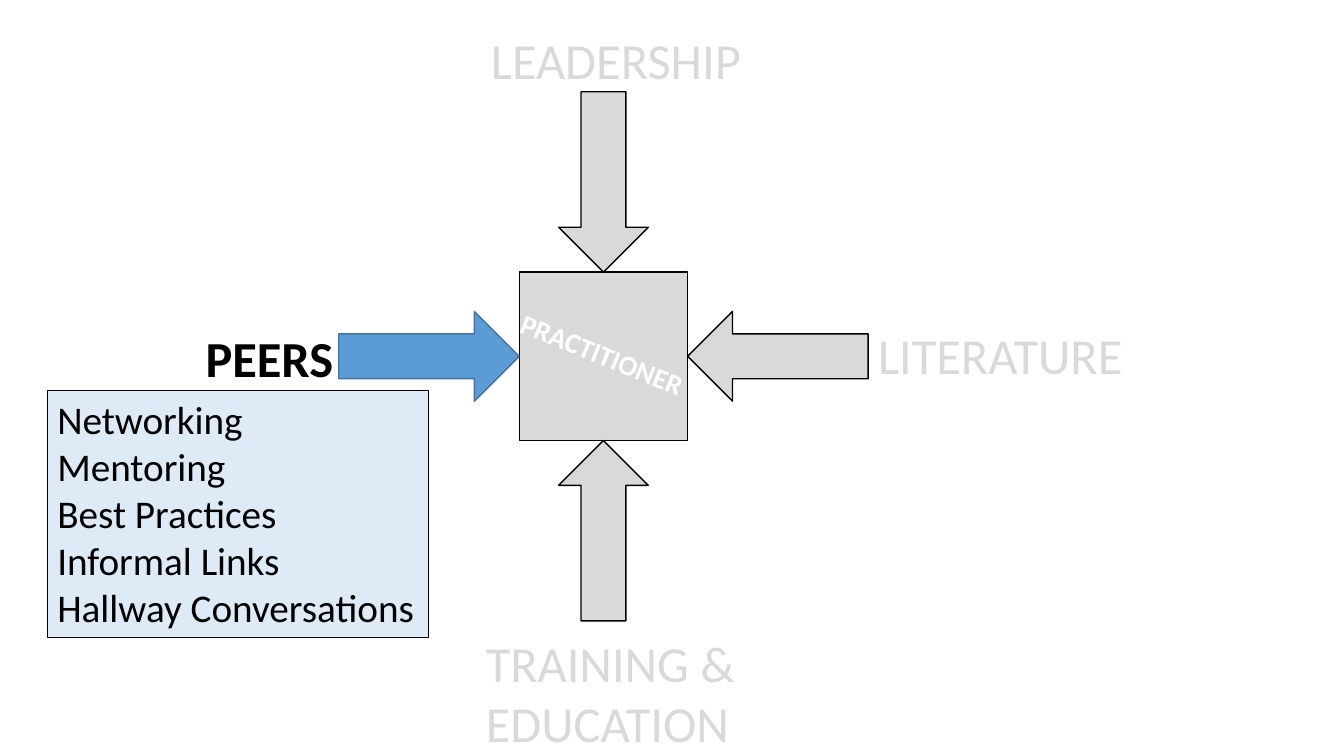
"""Build the slide of four influences on a practitioner, with peers highlighted."""
from pptx import Presentation
from pptx.dml.color import RGBColor
from pptx.enum.shapes import MSO_SHAPE
from pptx.enum.text import MSO_ANCHOR, MSO_AUTO_SIZE, PP_ALIGN
from pptx.util import Pt

PX = 9144
FONT = "Calibri"
RECTANGLE = MSO_SHAPE.RECTANGLE
RIGHT_ARROW, DOWN_ARROW = MSO_SHAPE.RIGHT_ARROW, MSO_SHAPE.DOWN_ARROW
TOP, LEFT, GROW = MSO_ANCHOR.TOP, PP_ALIGN.LEFT, MSO_AUTO_SIZE.SHAPE_TO_FIT_TEXT
COLORS = {
    "muted": "D9D9D9",
    "accent": "5B9BD5",
    "accent_line": "43739E",
    "panel": "DEEBF7",
    "black": "000000",
    "white": "FFFFFF",
}

SQUARE_LEFT, SQUARE_TOP, SQUARE_SIZE = 515, 270, 167
ARROW_LENGTH, ARROW_WIDTH = 179, 89
LABELS = [
    (["LEADERSHIP"], (477, 24, 277, 71), 36, "muted", False, 0),
    (["PEERS"], (194, 320, 148, 71), 36, "black", True, 0),
    (["LITERATURE"], (861, 317, 265, 71), 36, "muted", False, 0),
    (["TRAINING &", "EDUCATION"], (472, 622, 281, 131), 36, "muted", False, 0),
    (["PRACTITIONER"], (502, 330, 192, 44), 20, "white", True, 22),
]
PEER_SOURCES = [
    "Networking",
    "Mentoring",
    "Best Practices",
    "Informal Links",
    "Hallway Conversations",
]
PEER_PANEL = (47, 387, 378, 246)


def color(name):
    return RGBColor.from_string(COLORS[name])


def scaled(frame):
    return [length * PX for length in frame]


def add_figure(page, kind, frame, fill="muted", line="black", weight=1, turn=0):
    figure = page.shapes.add_shape(kind, *scaled(frame))
    figure.shadow.inherit = False
    figure.fill.solid()
    figure.fill.fore_color.rgb = color(fill)
    figure.line.color.rgb = color(line)
    figure.line.width = Pt(weight)
    figure.rotation = turn
    return figure


def write(box, lines, size, ink, bold=False):
    frame = box.text_frame
    frame.text = "\n".join(lines)
    frame.word_wrap = False
    frame.auto_size = GROW
    frame.vertical_anchor = TOP
    for para in frame.paragraphs:
        para.alignment = LEFT
        for span in para.runs:
            span.font.name = FONT
            span.font.size = Pt(size)
            span.font.bold = bold
            span.font.color.rgb = color(ink)


def add_diagram(page):
    add_figure(page, RECTANGLE, (SQUARE_LEFT, SQUARE_TOP, SQUARE_SIZE, SQUARE_SIZE))
    inset = (SQUARE_SIZE - ARROW_WIDTH) // 2
    across, down = SQUARE_LEFT + inset, SQUARE_TOP + inset
    flat = (ARROW_LENGTH, ARROW_WIDTH)
    tall = (ARROW_WIDTH, ARROW_LENGTH)
    add_figure(page, RIGHT_ARROW, (SQUARE_LEFT - ARROW_LENGTH, down, *flat),
               "accent", "accent_line")
    add_figure(page, DOWN_ARROW, (across, SQUARE_TOP - ARROW_LENGTH, *tall))
    add_figure(page, RIGHT_ARROW, (SQUARE_LEFT + SQUARE_SIZE, down, *flat), turn=180)
    add_figure(page, DOWN_ARROW, (across, SQUARE_TOP + SQUARE_SIZE, *tall), turn=180)


def main():
    deck = Presentation()
    deck.slide_width, deck.slide_height = scaled((1333, 750))
    page = deck.slides.add_slide(deck.slide_layouts[6])
    add_diagram(page)
    panel = add_figure(page, RECTANGLE, PEER_PANEL, "panel", weight=0.75)
    write(panel, PEER_SOURCES, 28, "black")
    for lines, frame, size, ink, bold, turn in LABELS:
        label = page.shapes.add_textbox(*scaled(frame))
        label.rotation = turn
        write(label, lines, size, ink, bold)
    deck.save("out.pptx")


if __name__ == "__main__":
    main()
